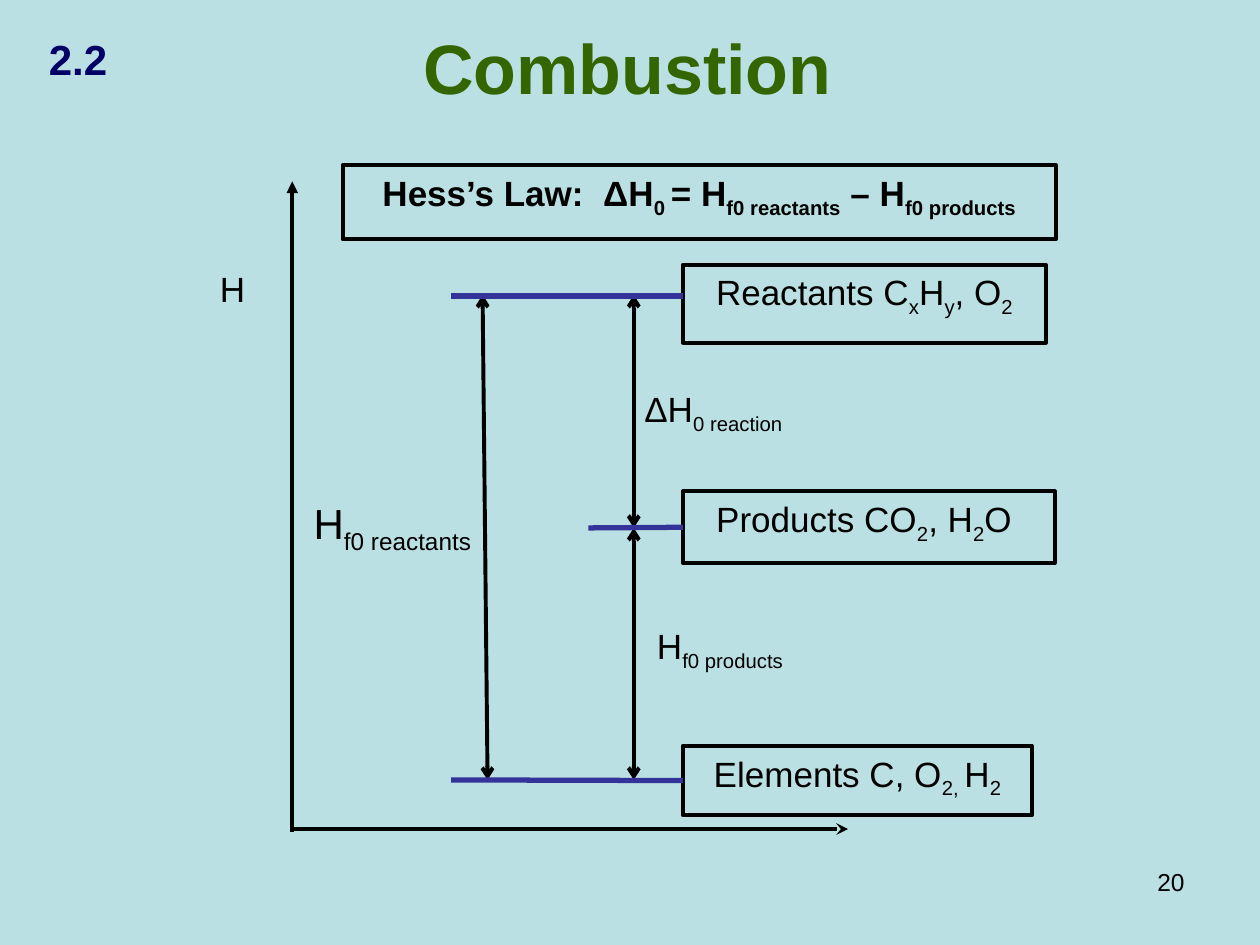
from typing import NamedTuple, Optional

from lxml.etree import SubElement
from pptx import Presentation
from pptx.dml.color import RGBColor
from pptx.enum.shapes import MSO_CONNECTOR, MSO_SHAPE
from pptx.enum.text import MSO_ANCHOR, PP_ALIGN
from pptx.oxml.ns import qn
from pptx.util import Inches, Pt

BLACK = RGBColor(0x00, 0x00, 0x00)
GREEN = RGBColor(0x33, 0x66, 0x00)
NAVY = RGBColor(0x00, 0x00, 0x66)
INDIGO = RGBColor(0x33, 0x33, 0x99)
PALE_BLUE = RGBColor(0xBB, 0xE0, 0xE3)
FONT = "Arial"
LINE_WIDTH = 2.25
BOX_LEFT = 5.42
REACTION_X = 5.03


class Label(NamedTuple):
    text: str  # parts between bars are subscripts
    left: float
    top: float
    width: float
    height: float
    size: int = 20
    bold: bool = False


class Arrow(NamedTuple):
    start: tuple[float, float]
    end: tuple[float, float]
    head: Optional[str] = None
    tail: Optional[str] = None


class Level(NamedTuple):
    left: float
    y: float
    box: Optional[int] = None  # index of the box whose left side it meets


BOXES = [
    Label("Elements C, O|2, |H|2|", BOX_LEFT, 5.92, 2.77, 0.55),
    Label("Reactants C|x|H|y|, O|2|", BOX_LEFT, 2.1, 2.88, 0.62),
    Label("Products CO|2|, H|2|O ", BOX_LEFT, 3.9, 2.95, 0.57),
    Label("Hess’s Law:  ΔH|0 |= H|f0 reactants| – H|f0 products|",
          2.72, 1.31, 5.66, 0.59, bold=True),
]
LABELS = [
    Label("H", 1.37, 2.07, 0.95, 0.64),
    Label("H|f0 reactants|", 2.18, 3.9, 1.87, 0.64, size=24),
    Label("H|f0 products|", 4.61, 4.91, 2.21, 0.64),
    Label("ΔH|0 reaction |", 4.67, 3.03, 2.03, 0.66),
]
ARROWS = [
    # Axes
    Arrow((2.32, 1.44), (2.32, 6.6), head="triangle"),
    Arrow((2.31, 6.58), (6.73, 6.58), tail="stealth"),
    # Enthalpy differences
    Arrow((3.83, 2.34), (3.87, 6.19), "arrow", "arrow"),
    Arrow((REACTION_X, 4.19), (REACTION_X, 6.19), "arrow", "arrow"),
    Arrow((REACTION_X, 2.34), (REACTION_X, 4.19), "arrow", "arrow"),
]
LEVELS = [Level(4.67, 4.19, box=2), Level(3.58, 2.35), Level(3.58, 6.19, box=0)]


def write(tf, text: str, *, size: int = 20, color: RGBColor = BLACK,
          bold: bool = False, align=PP_ALIGN.CENTER, after: int = 0,
          anchor=MSO_ANCHOR.TOP) -> None:
    tf.word_wrap = True
    tf.vertical_anchor = anchor
    p = tf.paragraphs[0]
    p.alignment = align
    p.space_after = Pt(after)
    for i, part in enumerate(text.split("|")):
        if not part:
            continue
        r = p.add_run()
        r.text = part
        r.font.name, r.font.size, r.font.bold = FONT, Pt(size), bold
        r.font.color.rgb = color
        if i % 2:
            r._r.get_or_add_rPr().set("baseline", "-25000")


def add_text(s, item: Label, **fmt) -> None:
    sp = s.shapes.add_textbox(*map(Inches, item[1:5]))
    write(sp.text_frame, item.text, size=item.size, bold=item.bold, **fmt)


def add_box(s, item: Label):
    sp = s.shapes.add_shape(MSO_SHAPE.RECTANGLE, *map(Inches, item[1:5]))
    sp.shadow.inherit = False
    sp.fill.background()
    sp.line.color.rgb = BLACK
    sp.line.width = Pt(LINE_WIDTH)
    write(sp.text_frame, item.text, size=item.size, bold=item.bold, after=10)
    return sp


def add_line(s, item: Arrow, color: RGBColor = BLACK, width: float = LINE_WIDTH):
    cx = s.shapes.add_connector(MSO_CONNECTOR.STRAIGHT,
                                *map(Inches, item.start + item.end))
    cx.line.color.rgb = color
    cx.line.width = Pt(width)
    ln = cx.line._get_or_add_ln()
    for tag, kind in (("a:headEnd", item.head), ("a:tailEnd", item.tail)):
        if kind:
            SubElement(ln, qn(tag), type=kind)
    SubElement(cx._element.spPr, qn("a:effectLst"))
    return cx


def main() -> None:
    prs = Presentation()
    prs.slide_width, prs.slide_height = Inches(10), Inches(7.5)
    s = prs.slides.add_slide(prs.slide_layouts[6])
    s.background.fill.solid()
    s.background.fill.fore_color.rgb = PALE_BLUE

    # Page number, title and section number
    add_text(s, Label("20", 7.17, 6.83, 2.33, 0.52, 14), align=PP_ALIGN.RIGHT)
    add_text(s, Label("Combustion", -0.02, 0.14, 10, 0.77, 40, True),
             color=GREEN, anchor=MSO_ANCHOR.MIDDLE)
    add_text(s, Label("2.2", 0.16, 0.22, 0.92, 0.5, 24, True), color=NAVY)

    # Enthalpy diagram
    for arrow in ARROWS:
        add_line(s, arrow)
    boxes = [add_box(s, box) for box in BOXES]
    for label in LABELS:
        add_text(s, label, after=10)

    # Energy levels
    for level in LEVELS:
        cx = add_line(s, Arrow((BOX_LEFT, level.y), (level.left, level.y)), INDIGO, 3)
        if level.box is not None:
            cx.begin_connect(boxes[level.box], 1)

    prs.save("out.pptx")


if __name__ == "__main__":
    main()
